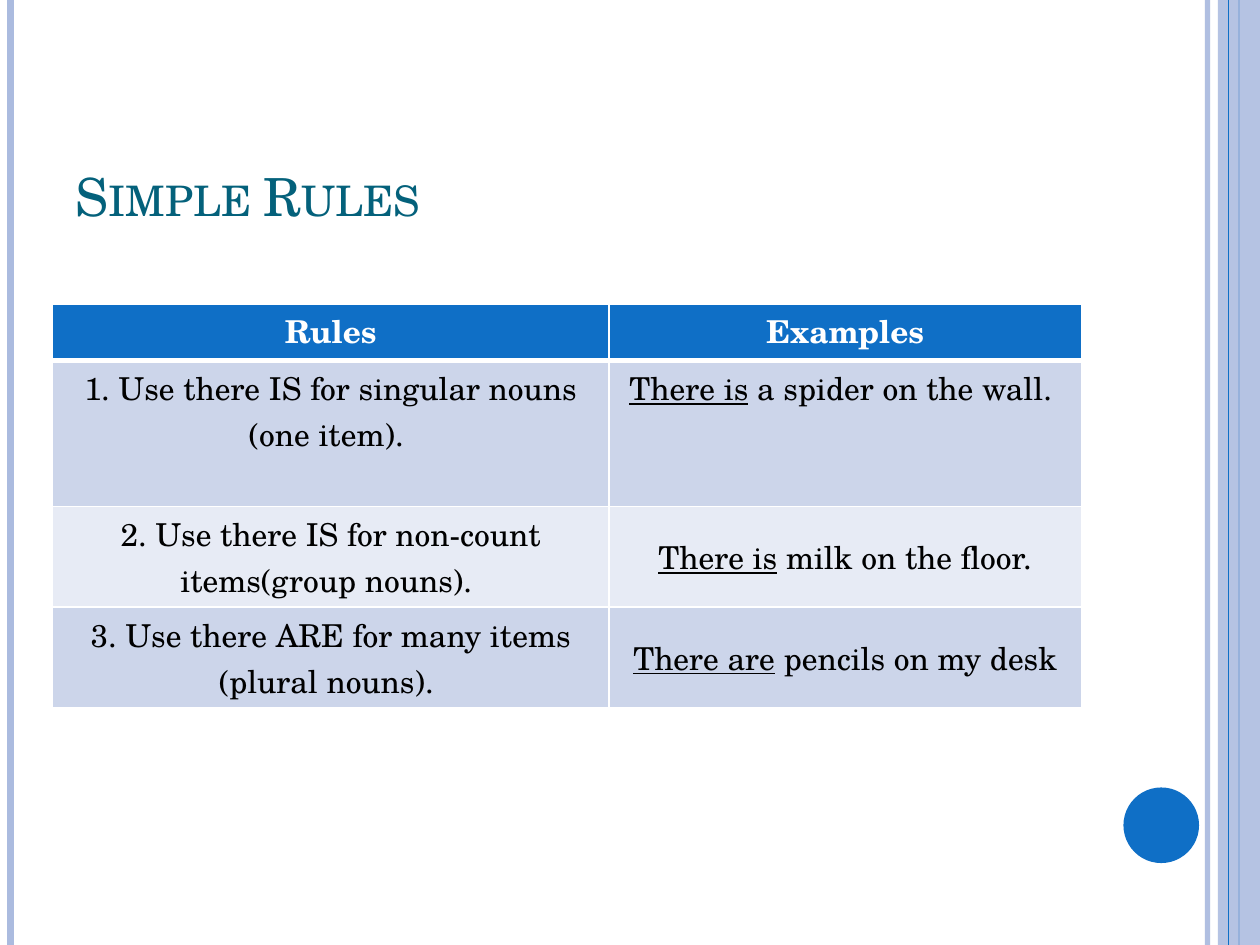
"""Build the slide of simple rules for there is and there are."""
from dataclasses import dataclass

from lxml import etree
from pptx import Presentation
from pptx import util as u
from pptx.dml.color import RGBColor
from pptx.enum import shapes, text
from pptx.oxml import ns

Pt = u.Pt


@dataclass(frozen=True)
class Theme:
    font: str = "TeX Gyre Schola"
    title_size: int = 30
    body_size: int = 18
    body_leading: float = 26.5
    title: str = "04617B"
    accent: str = "0F6FC6"
    stripe: str = "ABBBDF"
    odd_row: str = "CCD5EA"
    even_row: str = "E7EBF5"
    ink: str = "000000"
    white: str = "FFFFFF"


def add_text(paragraph, words, *, font, size, color, bold=False, underline=False, small_caps=False):
    run = paragraph.add_run()
    run.text = words
    run.font.name = font
    run.font.size = Pt(size)
    run.font.bold = bold
    run.font.underline = underline
    run.font.color.rgb = RGBColor.from_string(color)
    if small_caps:
        run._r.get_or_add_rPr().set("cap", "small")


def set_opacity(element, percent):
    color = next(element.iter(ns.qn("a:srgbClr")))
    etree.SubElement(color, ns.qn("a:alpha"), val=str(percent * 1000))


class SlideBuilder:
    def __init__(self, slide, theme):
        self.slide = slide
        self.theme = theme

    def title(self, words, left, top, width, height):
        heading = self.slide.shapes.title
        heading.left, heading.top, heading.width, heading.height = map(Pt, (left, top, width, height))
        frame = heading.text_frame
        frame.word_wrap = True
        frame.vertical_anchor = text.MSO_ANCHOR.BOTTOM
        paragraph = frame.paragraphs[0]
        paragraph.alignment = text.PP_ALIGN.LEFT
        add_text(paragraph, words, font=self.theme.font, size=self.theme.title_size,
                 color=self.theme.title, small_caps=True)

    def vertical_line(self, x, color, weight, opacity=100):
        stripe = self.slide.shapes.add_connector(
            shapes.MSO_CONNECTOR.STRAIGHT, Pt(x), Pt(0), Pt(x), Pt(540))
        stripe.line.color.rgb = RGBColor.from_string(color)
        stripe.line.width = Pt(weight)
        properties = stripe._element.spPr
        if opacity < 100:
            set_opacity(properties, opacity)
        etree.SubElement(properties, ns.qn("a:effectLst"))

    def shape(self, preset, left, top, width, height, color, opacity=100):
        figure = self.slide.shapes.add_shape(preset, *map(Pt, (left, top, width, height)))
        figure.shadow.inherit = False
        figure.fill.solid()
        figure.fill.fore_color.rgb = RGBColor.from_string(color)
        figure.line.fill.background()
        if opacity < 100:
            set_opacity(figure._element.spPr, opacity)

    def cell_border(self, cell, side, weight):
        border = etree.SubElement(cell._tc.get_or_add_tcPr(), ns.qn(f"a:ln{side}"), w=str(Pt(weight)))
        fill = etree.SubElement(border, ns.qn("a:solidFill"))
        etree.SubElement(fill, ns.qn("a:srgbClr"), val=self.theme.white)

    def cell(self, cell, parts, row):
        theme = self.theme
        header = row == 0
        weights = {"L": 1, "R": 1, "T": 3 if row == 1 else 1, "B": 3 if header else 1}
        for side, weight in weights.items():
            self.cell_border(cell, side, weight)
        cell.fill.solid()
        color = theme.accent if header else theme.odd_row if row % 2 else theme.even_row
        cell.fill.fore_color.rgb = RGBColor.from_string(color)
        cell.margin_left = cell.margin_right = cell.margin_top = cell.margin_bottom = Pt(2.25)
        cell.vertical_anchor = text.MSO_ANCHOR.TOP if row == 1 else text.MSO_ANCHOR.MIDDLE
        paragraph = cell.text_frame.paragraphs[0]
        paragraph.alignment = text.PP_ALIGN.CENTER
        paragraph.line_spacing = Pt(theme.body_leading)
        for words, underline in parts:
            add_text(paragraph, words, font=theme.font, size=theme.body_size, bold=header,
                     color=theme.white if header else theme.ink, underline=underline)

    def table(self, rows, left, top, widths, heights):
        grid = self.slide.shapes.add_table(
            len(rows), len(widths), Pt(left), Pt(top), Pt(sum(widths)), Pt(sum(heights))).table
        for column, width in zip(grid.columns, widths):
            column.width = Pt(width)
        for index, (parts_by_column, height) in enumerate(zip(rows, heights)):
            grid.rows[index].height = Pt(height)
            for column, parts in enumerate(parts_by_column):
                self.cell(grid.cell(index, column), parts, index)


def main():
    deck = Presentation()
    deck.slide_width, deck.slide_height = Pt(720), Pt(540)
    theme = Theme()
    builder = SlideBuilder(deck.slides.add_slide(deck.slide_layouts[5]), theme)

    builder.vertical_line(690, theme.stripe, 3, opacity=93)
    builder.vertical_line(6, theme.stripe, 4.5)
    builder.vertical_line(708, theme.accent, 1.5)
    builder.shape(shapes.MSO_SHAPE.RECTANGLE, 696, 0, 24, 540, theme.stripe, opacity=87)
    builder.vertical_line(702, theme.accent, 0.75)
    builder.shape(shapes.MSO_SHAPE.OVAL, 642, 450, 43.2, 43.2, theme.accent)
    builder.title("Simple Rules", 36, 21.6, 588, 111.6)

    rules = [
        ("1. Use there IS for singular nouns (one item). ", "There is", " a spider on the wall. "),
        ("2. Use there IS for non-count items(group nouns). ", "There is", " milk on the floor."),
        ("3. Use there ARE for many items (plural nouns). ", "There are", " pencils on my desk"),
    ]
    rows = [([("Rules", False)], [("Examples", False)])]
    rows += [([(rule, False)], [(phrase, True), (rest, False)]) for rule, phrase, rest in rules]
    builder.table(rows, 30, 174, widths=(318, 270), heights=(32, 83.5, 57.5, 57.5))
    deck.save("out.pptx")


if __name__ == "__main__":
    main()
